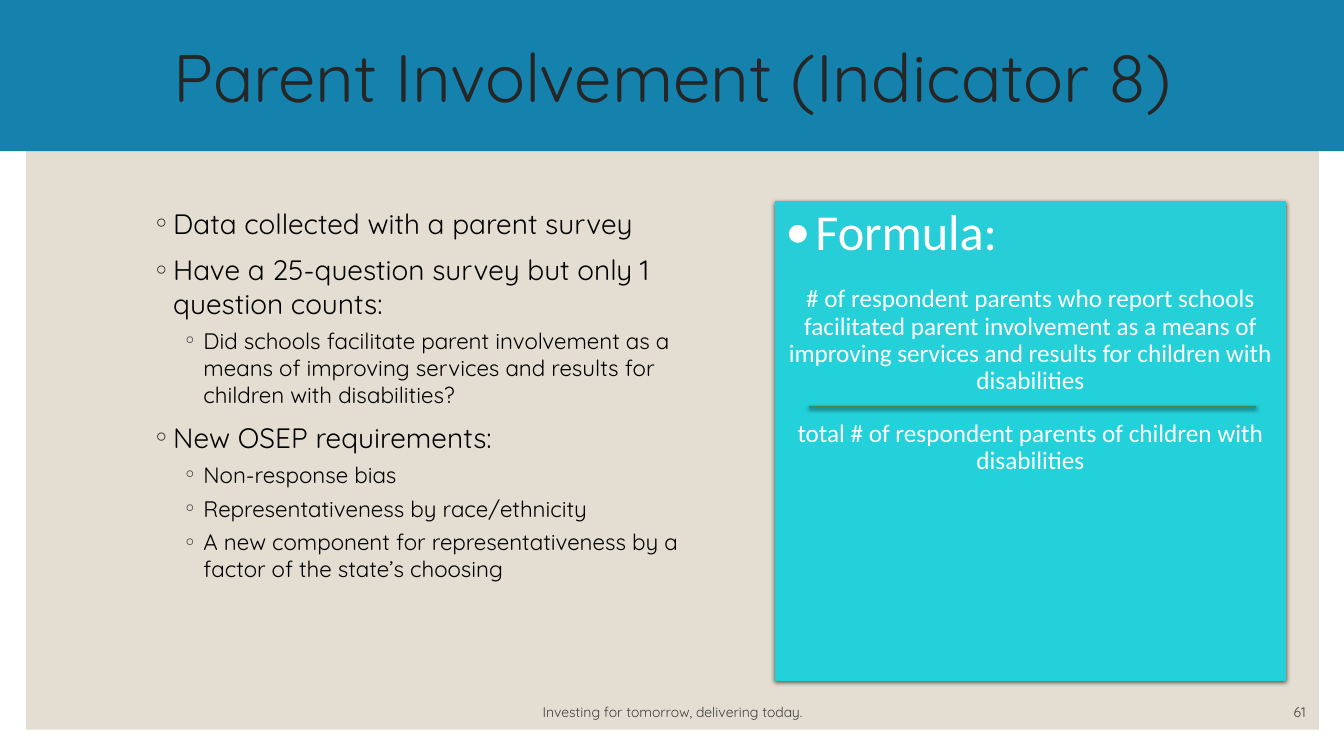
from dataclasses import dataclass

from lxml import etree
from pptx import Presentation
from pptx.dml.color import RGBColor
from pptx.enum.shapes import MSO_CONNECTOR, MSO_SHAPE
from pptx.enum.text import MSO_ANCHOR, PP_ALIGN
from pptx.oxml import parse_xml
from pptx.oxml.ns import nsdecls, qn
from pptx.util import Inches, Pt

LEFT, CENTER, RIGHT = PP_ALIGN.LEFT, PP_ALIGN.CENTER, PP_ALIGN.RIGHT
TOP, MIDDLE, BOTTOM = MSO_ANCHOR.TOP, MSO_ANCHOR.MIDDLE, MSO_ANCHOR.BOTTOM
RECTANGLE, STRAIGHT = MSO_SHAPE.RECTANGLE, MSO_CONNECTOR.STRAIGHT


@dataclass(frozen=True)
class Theme:
    main_font: str = "Quicksand"
    formula_font: str = "Calibri"
    panel: str = "E3DED1"
    band: str = "1482AC"
    title: str = "262626"
    body: str = "000000"
    footer: str = "404040"
    formula_text: str = "FFFFFF"
    formula_edge: str = "27CED7"
    formula_stops: tuple = ((0, "27CED7"), (50, "22D1DA"), (100, "22D0D9"))
    fraction_line: str = "3E8853"
    title_size: int = 48
    formula_heading_size: int = 36
    point_size: int = 20
    formula_size: int = 18
    detail_size: int = 16
    footer_size: int = 10


theme = Theme()


def add_text(frame, text, size, color, font=theme.main_font, align=LEFT, anchor=TOP,
             before=0, line_spacing=1.0, bullet=None, bullet_color=None,
             indent=0, hanging=0, level=0, tracking=0):
    """Add one formatted paragraph; the first one fills the frame's empty paragraph."""
    frame.word_wrap = True
    frame.vertical_anchor = anchor
    paragraph = frame.paragraphs[0]
    if paragraph.runs:
        paragraph = frame.add_paragraph()
    paragraph.alignment = align
    paragraph.level = level
    paragraph.space_before = Pt(before)
    paragraph.line_spacing = line_spacing
    run = paragraph.add_run()
    run.text = text
    run.font.size = Pt(size)
    run.font.name = font
    run.font.color.rgb = RGBColor.from_string(color)
    if tracking:
        run.font._element.set("spc", str(round(tracking * 100)))
    if bullet:
        properties = paragraph._p.get_or_add_pPr()
        properties.set("marL", str(Inches(indent)))
        properties.set("indent", str(-Inches(hanging)))
        color_element = etree.SubElement(properties, qn("a:buClr"))
        etree.SubElement(color_element, qn("a:srgbClr"), val=bullet_color or color)
        etree.SubElement(properties, qn("a:buFont"), typeface=font)
        etree.SubElement(properties, qn("a:buChar"), char=bullet)


def add_soft_shadow(shape):
    shape._element.spPr.append(parse_xml(
        f'<a:effectLst {nsdecls("a")}><a:outerShdw blurRad="{Pt(3)}" dist="{Pt(1)}" '
        'dir="5400000" algn="ctr" rotWithShape="0"><a:srgbClr val="000000">'
        '<a:alpha val="63000"/></a:srgbClr></a:outerShdw></a:effectLst>'))


presentation = Presentation()
presentation.slide_width = Inches(13.33)
presentation.slide_height = Inches(7.5)
slide = presentation.slides.add_slide(presentation.slide_layouts[6])
shapes = slide.shapes

# Background panel and title band
for box, color in (((0.26, 0.26, 12.82, 6.98), theme.panel),
                   ((0, 0, 13.33, 1.5), theme.band)):
    background = shapes.add_shape(RECTANGLE, *map(Inches, box))
    background.shadow.inherit = False
    background.fill.solid()
    background.fill.fore_color.rgb = RGBColor.from_string(color)
    background.line.fill.background()

# Title and footer
for box, text, size, color, align, anchor, spacing in (
    ((1.17, 0.05, 11, 1.5), "Parent Involvement (Indicator 8)",
     theme.title_size, theme.title, CENTER, MIDDLE, 0.9),
    ((3.82, 6.9, 5.7, 0.3), "Investing for tomorrow, delivering today.",
     theme.footer_size, theme.footer, CENTER, BOTTOM, 1.0),
    ((11.45, 6.9, 1.6, 0.3), "61",
     theme.footer_size, theme.footer, RIGHT, BOTTOM, 1.0),
):
    text_box = shapes.add_textbox(*map(Inches, box))
    add_text(text_box.text_frame, text, size, color, align=align, anchor=anchor,
             line_spacing=spacing)

# Bulleted points: (level, text)
points = shapes.add_textbox(Inches(1.42), Inches(2), Inches(5.93), Inches(4.75))
level_formats = (
    {"size": theme.point_size, "before": 9, "indent": 0.2},
    {"size": theme.detail_size, "before": 5, "indent": 0.5},
)
for level, text in (
    (0, "Data collected with a parent survey"),
    (0, "Have a 25-question survey but only 1 question counts:"),
    (1, "Did schools facilitate parent involvement as a means of improving "
        "services and results for children with disabilities?"),
    (0, "New OSEP requirements:"),
    (1, "Non-response bias"),
    (1, "Representativeness by race/ethnicity"),
    (1, "A new component for representativeness by a factor of the state’s choosing"),
):
    add_text(points.text_frame, text, color=theme.body, level=level, bullet="◦",
             bullet_color=theme.title, hanging=0.2, **level_formats[level])

# Formula card
card = shapes.add_shape(RECTANGLE, Inches(7.69), Inches(2), Inches(5.06), Inches(4.75))
card.fill.gradient()
card.fill.gradient_angle = 270
stop_list = card._element.spPr.find(qn("a:gradFill")).find(qn("a:gsLst"))
stop_list.clear()
for position, color in theme.formula_stops:
    stop = etree.SubElement(stop_list, qn("a:gs"), pos=str(position * 1000))
    etree.SubElement(stop, qn("a:srgbClr"), val=color)
card.line.color.rgb = RGBColor.from_string(theme.formula_edge)
card.line.width = Pt(0.5)
add_soft_shadow(card)

formula_format = {"color": theme.formula_text, "font": theme.formula_font,
                  "before": 18, "line_spacing": 0.9}
add_text(card.text_frame, "Formula:", theme.formula_heading_size, bullet="•",
         indent=0.3, hanging=0.3, tracking=-0.1, **formula_format)
for text in (
    "# of respondent parents who report schools facilitated parent involvement "
    "as a means of improving services and results for children with disabilities",
    "total # of respondent parents of children with disabilities",
):
    add_text(card.text_frame, text, theme.formula_size, align=CENTER, **formula_format)

fraction_line = shapes.add_connector(STRAIGHT, Inches(8.02), Inches(4.04),
                                     Inches(12.46), Inches(4.04))
fraction_line.line.color.rgb = RGBColor.from_string(theme.fraction_line)
fraction_line.line.width = Pt(1.5)
add_soft_shadow(fraction_line)

presentation.save("out.pptx")
